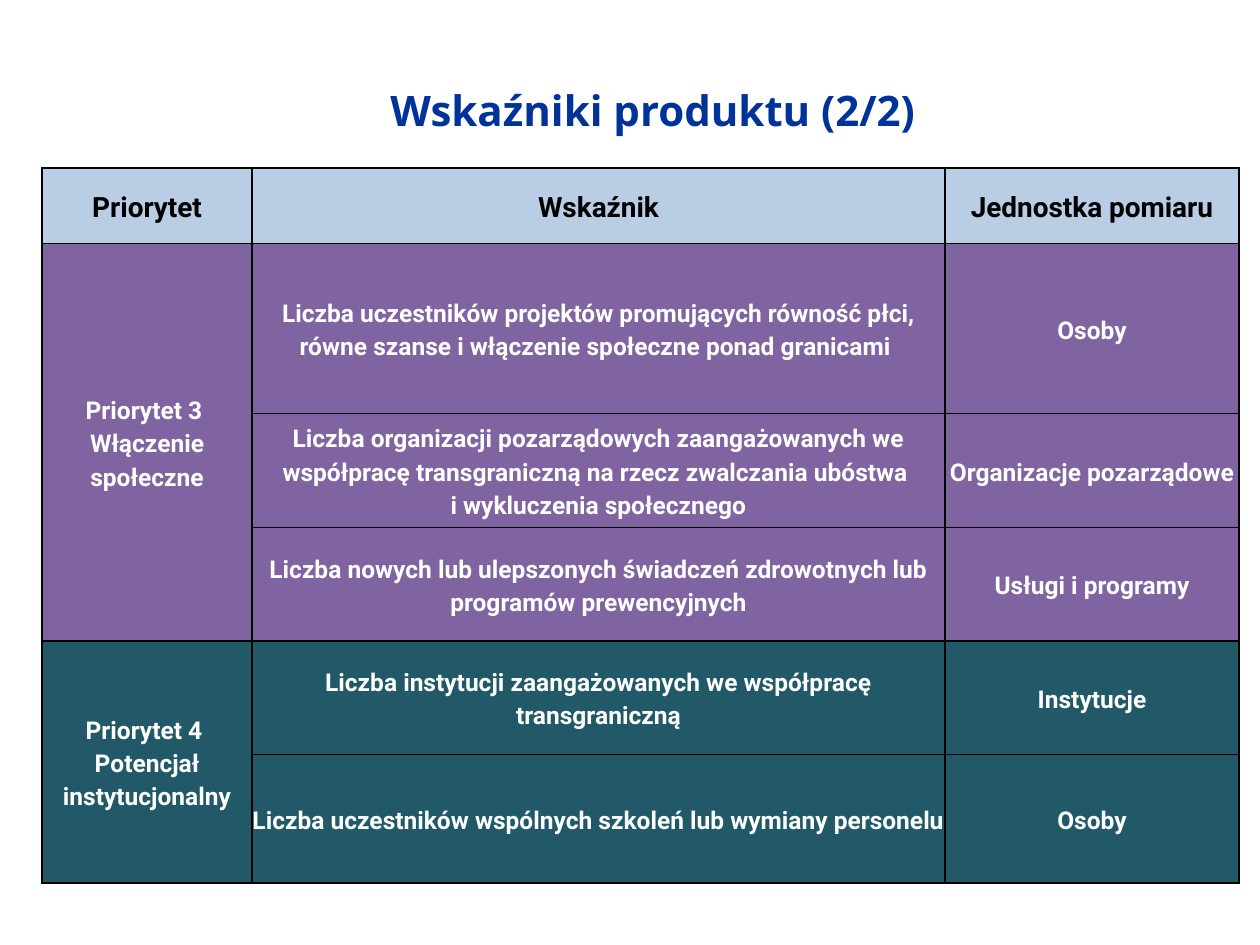
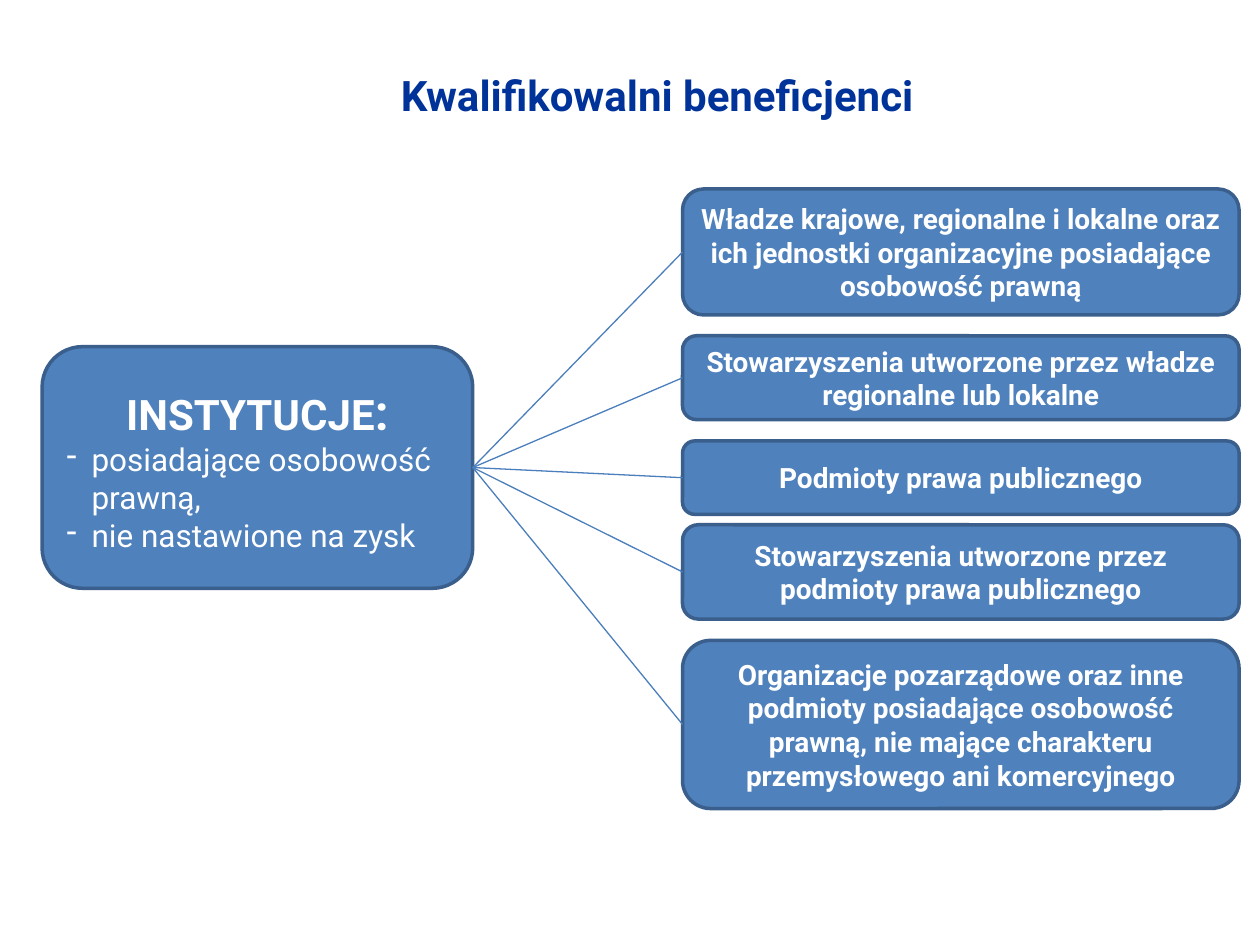
"""Builds two slides on product indicators and eligible beneficiaries."""
from pptx import Presentation
from pptx.dml.color import RGBColor
from pptx.enum.shapes import MSO_CONNECTOR as Connector, MSO_SHAPE as Shape
from pptx.enum.text import MSO_ANCHOR as Anchor, PP_ALIGN as Align
from pptx.oxml import parse_xml
from pptx.oxml.ns import nsdecls
from pptx.util import Cm, Pt

WHITE = RGBColor(0xFF, 0xFF, 0xFF)
BLACK = RGBColor(0x00, 0x00, 0x00)
NAVY = RGBColor(0x00, 0x33, 0x99)
PALE_BLUE = RGBColor(0xB9, 0xCD, 0xE5)
PURPLE = RGBColor(0x80, 0x64, 0xA2)
TEAL = RGBColor(0x21, 0x59, 0x68)
BLUE = RGBColor(0x4F, 0x81, 0xBD)
DARK_BLUE = RGBColor(0x3A, 0x5F, 0x8C)
LINE_BLUE = RGBColor(0x4B, 0x7E, 0xBC)
FONT = "Roboto"


def format_runs(paragraph, size, color, bold=True, name=FONT):
    for run in paragraph.runs:
        run.font.name = name
        run.font.size = Pt(size)
        run.font.bold = bold
        run.font.color.rgb = color


def add_box(slide, left, top, width, height):
    box = slide.shapes.add_shape(Shape.ROUNDED_RECTANGLE, Cm(left), Cm(top), Cm(width), Cm(height))
    box.shadow.inherit = False
    box.fill.solid()
    box.fill.fore_color.rgb = BLUE
    box.line.color.rgb = DARK_BLUE
    box.line.width = Pt(2)
    box.text_frame.word_wrap = True
    box.text_frame.vertical_anchor = Anchor.MIDDLE
    return box


deck = Presentation()
deck.slide_width, deck.slide_height = Cm(25.4), Cm(19.05)

TITLES = [
    ("Wskaźniki produktu (2/2)", "Open Sans", (7.62, 1.27, 15.88, 1.9)),
    ("Kwalifikowalni beneficjenci", FONT, (7.83, 0.85, 15.24, 2.12)),
]
for wording, title_font, place in TITLES:
    slide = deck.slides.add_slide(deck.slide_layouts[6])
    title = slide.shapes.add_textbox(*[Cm(length) for length in place]).text_frame
    title.word_wrap = True
    title.vertical_anchor = Anchor.MIDDLE
    title.text = wording
    format_runs(title.paragraphs[0], 24, NAVY, name=title_font)
indicators_slide, beneficiaries_slide = deck.slides

INDICATORS = [
    (PALE_BLUE, "Priorytet", "Wskaźnik", "Jednostka pomiaru"),
    (PURPLE, "Priorytet 3 \nWłączenie społeczne",
     "Liczba uczestników projektów promujących równość płci, "
     "równe szanse i włączenie społeczne ponad granicami ", "Osoby"),
    (PURPLE, "",
     "Liczba organizacji pozarządowych zaangażowanych we współpracę transgraniczną "
     "na rzecz zwalczania ubóstwa \ni wykluczenia społecznego", "Organizacje pozarządowe"),
    (PURPLE, "",
     "Liczba nowych lub ulepszonych świadczeń zdrowotnych lub programów prewencyjnych",
     "Usługi i programy"),
    (TEAL, "Priorytet 4 \nPotencjał instytucjonalny",
     "Liczba instytucji zaangażowanych we współpracę transgraniczną", "Instytucje"),
    (TEAL, "", "Liczba uczestników wspólnych szkoleń lub wymiany personelu", "Osoby"),
]
COLUMN_WIDTHS = [4.23, 13.97, 5.93]
ROW_HEIGHTS = [1.52, 3.43, 2.29, 2.29, 2.29, 2.59]

indicators = indicators_slide.shapes.add_table(
    len(ROW_HEIGHTS), len(COLUMN_WIDTHS), Cm(0.85), Cm(3.39),
    Cm(sum(COLUMN_WIDTHS)), Cm(sum(ROW_HEIGHTS))).table
indicators.first_row = indicators.horz_banding = False
for column, width in zip(indicators.columns, COLUMN_WIDTHS):
    column.width = Cm(width)
for row, height, (band, *wordings) in zip(indicators.rows, ROW_HEIGHTS, INDICATORS):
    row.height = Cm(height)
    for cell, wording in zip(row.cells, wordings):
        cell.margin_left = cell.margin_right = cell.margin_top = cell.margin_bottom = 0
        cell.vertical_anchor = Anchor.MIDDLE
        for side in ("lnL", "lnR", "lnT", "lnB"):
            cell._tc.get_or_add_tcPr().append(parse_xml(
                f'<a:{side} {nsdecls("a")} w="12700"><a:solidFill>'
                f'<a:srgbClr val="{BLACK}"/></a:solidFill></a:{side}>'))
        cell.fill.solid()
        cell.fill.fore_color.rgb = band
        if wording:
            label = cell.text_frame.paragraphs[0]
            label.text = wording
            label.alignment = Align.CENTER
            label.line_spacing = 1.15
            label.space_after = Pt(10)
            is_header = band == PALE_BLUE
            format_runs(label, 16 if is_header else 14, BLACK if is_header else WHITE)
for first, last in [(1, 3), (4, 5)]:
    indicators.cell(first, 0).merge(indicators.cell(last, 0))

institutions = add_box(beneficiaries_slide, 0.85, 6.99, 8.68, 4.87)
heading = institutions.text_frame.paragraphs[0]
heading.alignment = Align.CENTER
for wording in ("INSTYTUCJE", ":"):
    heading.add_run().text = wording
format_runs(heading, 24, WHITE)
heading.runs[1].font.size = Pt(28)
for wording in ("posiadające osobowość prawną,", "nie nastawione na zysk"):
    condition = institutions.text_frame.add_paragraph()
    condition.text = wording
    condition.alignment = Align.LEFT
    properties = condition._p.get_or_add_pPr()
    properties.set("marL", str(Cm(0.51)))
    properties.set("indent", str(-Cm(0.51)))
    properties.append(parse_xml(f'<a:buChar {nsdecls("a")} char="-"/>'))
    format_runs(condition, 18, WHITE, bold=False)

BENEFICIARIES = [
    (3.81, 2.54, "Władze krajowe, regionalne i lokalne oraz ich jednostki organizacyjne "
                 "posiadające osobowość prawną"),
    (6.77, 1.69, "Stowarzyszenia utworzone przez władze regionalne lub lokalne"),
    (8.89, 1.48, "Podmioty prawa publicznego"),
    (10.58, 1.9, "Stowarzyszenia utworzone przez podmioty prawa publicznego"),
    (12.91, 3.39, "Organizacje pozarządowe oraz inne podmioty posiadające osobowość prawną, "
                  "nie mające charakteru przemysłowego ani komercyjnego"),
]
for top, height, wording in BENEFICIARIES:
    beneficiary = add_box(beneficiaries_slide, 13.76, top, 11.22, height)
    beneficiary.text_frame.text = wording
    label = beneficiary.text_frame.paragraphs[0]
    label.alignment = Align.CENTER
    format_runs(label, 16, WHITE)
    link = beneficiaries_slide.shapes.add_connector(Connector.STRAIGHT, 0, 0, 0, 0)
    link.begin_connect(institutions, 3)
    link.end_connect(beneficiary, 1)
    link.line.color.rgb = LINE_BLUE
    link.line.width = Pt(0.75)
    link._element.spPr.append(parse_xml(f'<a:effectLst {nsdecls("a")}/>'))

deck.save("out.pptx")
